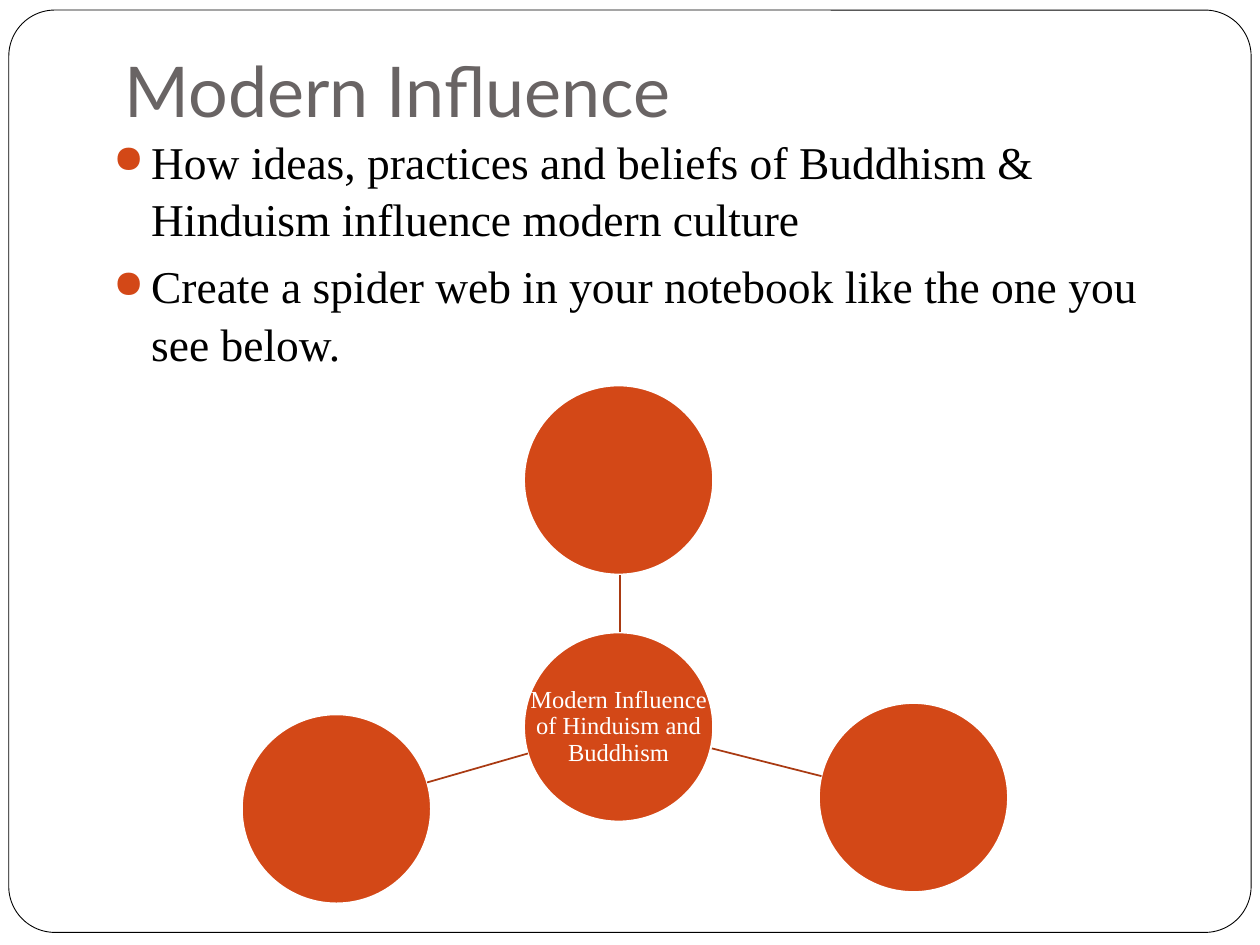
from lxml.etree import SubElement
from pptx import Presentation
from pptx.dml.color import RGBColor
from pptx.enum.shapes import MSO_CONNECTOR, MSO_SHAPE
from pptx.enum.text import MSO_ANCHOR, PP_ALIGN
from pptx.oxml.ns import qn
from pptx.util import Inches, Pt

WHITE = RGBColor(0xFF, 0xFF, 0xFF)
BLACK = RGBColor(0, 0, 0)
GREY = RGBColor(0x69, 0x64, 0x64)
ORANGE = RGBColor(0xD3, 0x48, 0x17)
RUST = RGBColor(0xA9, 0x3A, 0x12)
SERIF = "Times New Roman"


def add_text(box, lines, size, color, font=SERIF, anchor=MSO_ANCHOR.TOP,
             align=PP_ALIGN.LEFT, inset=(0.07, 0.04), spacing=1.0,
             before=0, bullet=False):
    frame = slide.shapes.add_textbox(*map(Inches, box)).text_frame
    frame.word_wrap = True
    frame.vertical_anchor = anchor
    frame.margin_left = frame.margin_right = Inches(inset[0])
    frame.margin_top = frame.margin_bottom = Inches(inset[1])
    for i, line in enumerate(lines):
        para = frame.paragraphs[0] if i == 0 else frame.add_paragraph()
        para.alignment = align
        para.line_spacing = spacing
        para.space_before = Pt(before)
        run = para.add_run()
        run.text = line
        run.font.size = Pt(size)
        run.font.name = font
        run.font.color.rgb = color
        if bullet:
            props = para._p.get_or_add_pPr()
            props.set("marL", str(Inches(0.3)))
            props.set("indent", str(Inches(-0.3)))
            tint = SubElement(props, qn("a:buClr"))
            SubElement(tint, qn("a:srgbClr"), val=str(ORANGE))
            SubElement(props, qn("a:buSzPct"), val="85000")
            SubElement(props, qn("a:buChar"), char="●")


def add_shape(kind, box, fill, line, width):
    shape = slide.shapes.add_shape(kind, *map(Inches, box))
    shape.shadow.inherit = False
    shape.fill.solid()
    shape.fill.fore_color.rgb = fill
    shape.line.color.rgb = line
    shape.line.width = Pt(width)
    return shape


deck = Presentation()
deck.slide_width, deck.slide_height = Inches(10), Inches(7.5)
slide = deck.slides.add_slide(deck.slide_layouts[6])

# Rounded frame
frame = add_shape(MSO_SHAPE.ROUNDED_RECTANGLE, (0.07, 0.08, 9.86, 7.32),
                  WHITE, BLACK, 0.5)
frame.adjustments[0] = 0.05

# Title and bullets
add_text((0.92, -0.17, 8.5, 1.25), ["Modern Influence"], 40, GREY,
         font="Lato", anchor=MSO_ANCHOR.BOTTOM)
add_text((0.83, 1, 8.34, 2),
         ["How ideas, practices and beliefs of Buddhism & "
          "Hinduism influence modern culture",
          "Create a spider web in your notebook like the one you see below."],
         26, BLACK, before=5.8, spacing=1.05, bullet=True)

# Spider web: hub and outer circles
SIZE = 1.5
hub = (4.16, 5.02)
for left, top in [hub, (4.16, 3.06), (6.5, 5.58), (1.92, 5.67)]:
    add_shape(MSO_SHAPE.OVAL, (left, top, SIZE, SIZE), ORANGE, WHITE, 1)
add_text((*hub, SIZE, SIZE), ["Modern Influence of Hinduism and Buddhism"],
         14, WHITE, anchor=MSO_ANCHOR.MIDDLE, align=PP_ALIGN.CENTER,
         inset=(0.01, 0.01), spacing=0.9)

# Spokes from the hub
for ends in [(4.92, 5.02, 4.92, 4.56), (5.65, 5.94, 6.52, 6.16),
             (4.19, 5.98, 3.39, 6.21)]:
    spoke = slide.shapes.add_connector(MSO_CONNECTOR.STRAIGHT,
                                       *map(Inches, ends))
    spoke.line.color.rgb = RUST
    spoke.line.width = Pt(1)
    SubElement(spoke._element.spPr, qn("a:effectLst"))

deck.save("out.pptx")
